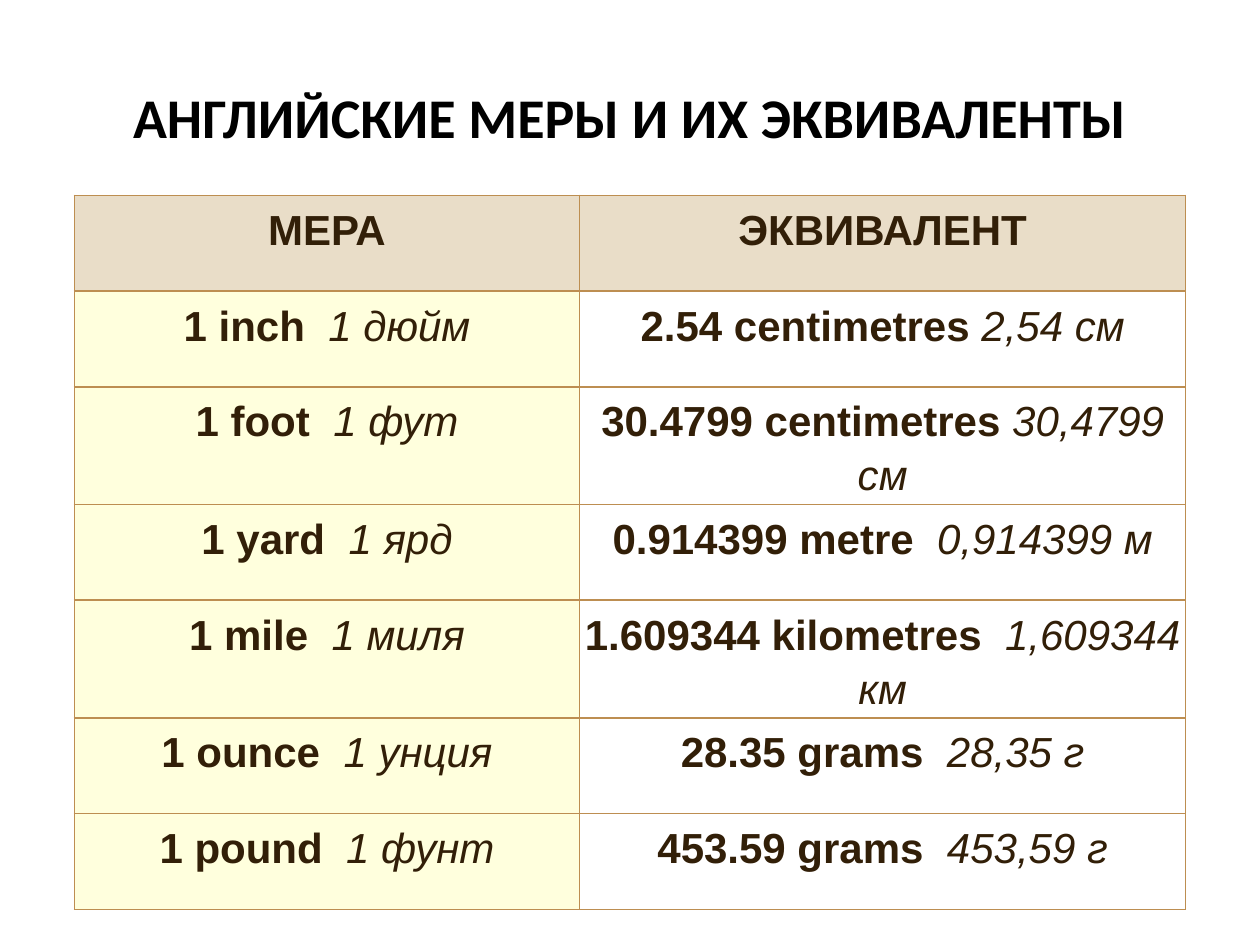
from lxml import etree
from pptx import Presentation
from pptx.dml.color import RGBColor
from pptx.enum.text import MSO_ANCHOR, PP_ALIGN
from pptx.oxml.ns import qn
from pptx.util import Inches, Pt

CENTER = PP_ALIGN.CENTER
MIDDLE = MSO_ANCHOR.MIDDLE
TOP = MSO_ANCHOR.TOP

TITLE = "АНГЛИЙСКИЕ МЕРЫ И ИХ ЭКВИВАЛЕНТЫ"
HEADERS = ("МЕРА", "ЭКВИВАЛЕНТ")
MEASURES = [
    (("1 inch  ", "1 дюйм"), ("2.54 centimetres ", "2,54 см")),
    (("1 foot  ", "1 фут"), ("30.4799 centimetres ", "30,4799 см")),
    (("1 yard  ", "1 ярд"), ("0.914399 metre  ", "0,914399 м")),
    (("1 mile  ", "1 миля"), ("1.609344 kilometres  ", "1,609344 км")),
    (("1 ounce  ", "1 унция"), ("28.35 grams  ", "28,35 г")),
    (("1 pound  ", "1 фунт"), ("453.59 grams  ", "453,59 г")),
]
COLUMN_WIDTHS = (4.01, 4.81)
ROW_HEIGHT = 0.76
CELL_MARGIN = 0.04
HEADER_FILL = "E9DDC8"
COLUMN_FILLS = ("FFFFDD", "FFFFFF")
BORDER_COLOR = "BD8E51"
TABLE_TEXT = "321F08"


def color(value):
    """Turn a hex string into a colour."""
    return RGBColor.from_string(value)


def add_text(paragraph, text, font="Arial", size=24, fill=TABLE_TEXT, bold=False, italic=False):
    """Add a formatted run to a centred paragraph."""
    paragraph.alignment = CENTER
    run = paragraph.add_run()
    run.text = text
    run.font.name = font
    run.font.size = Pt(size)
    run.font.color.rgb = color(fill)
    run.font.bold = bold
    run.font.italic = italic


def add_borders(cell):
    """Draw a thin line on all four sides of a cell."""
    properties = cell._tc.get_or_add_tcPr()
    for side in ("a:lnL", "a:lnR", "a:lnT", "a:lnB"):
        line = etree.SubElement(properties, qn(side), w=str(Pt(1)))
        fill = etree.SubElement(line, qn("a:solidFill"))
        etree.SubElement(fill, qn("a:srgbClr"), val=BORDER_COLOR)


def fill_cell(cell, parts, background):
    """Format a cell and write its bold term and italic translation."""
    add_borders(cell)
    cell.fill.solid()
    cell.fill.fore_color.rgb = color(background)
    cell.margin_left = cell.margin_right = Inches(CELL_MARGIN)
    cell.margin_top = cell.margin_bottom = Inches(CELL_MARGIN)
    cell.vertical_anchor = TOP
    paragraph = cell.text_frame.paragraphs[0]
    paragraph.line_spacing = 1.15
    for index, text in enumerate(parts):
        add_text(paragraph, text, bold=index == 0, italic=index == 1)


def add_title(slide):
    """Place and write the slide title."""
    title = slide.shapes.title
    title.left, title.top = Inches(0.5), Inches(0.3)
    title.width, title.height = Inches(9), Inches(1.25)
    title.text_frame.vertical_anchor = MIDDLE
    title.text_frame.word_wrap = True
    add_text(title.text_frame.paragraphs[0], TITLE, font="Calibri", size=32, fill="000000", bold=True)


def add_measure_table(slide):
    """Build the table of measures and equivalents."""
    rows = [[(header,) for header in HEADERS]] + MEASURES
    table = slide.shapes.add_table(
        len(rows), len(HEADERS), Inches(0.59), Inches(1.55),
        Inches(sum(COLUMN_WIDTHS)), Inches(ROW_HEIGHT * len(rows)),
    ).table
    table.horz_banding = False
    for column, width in zip(table.columns, COLUMN_WIDTHS):
        column.width = Inches(width)
    for row_index, row in enumerate(rows):
        table.rows[row_index].height = Inches(ROW_HEIGHT)
        for column_index, parts in enumerate(row):
            background = COLUMN_FILLS[column_index] if row_index else HEADER_FILL
            fill_cell(table.cell(row_index, column_index), parts, background)


def main():
    """Build and save the presentation."""
    presentation = Presentation()
    presentation.slide_width, presentation.slide_height = Inches(10), Inches(7.5)
    slide = presentation.slides.add_slide(presentation.slide_layouts[5])
    add_title(slide)
    add_measure_table(slide)
    presentation.save("out.pptx")


if __name__ == "__main__":
    main()
